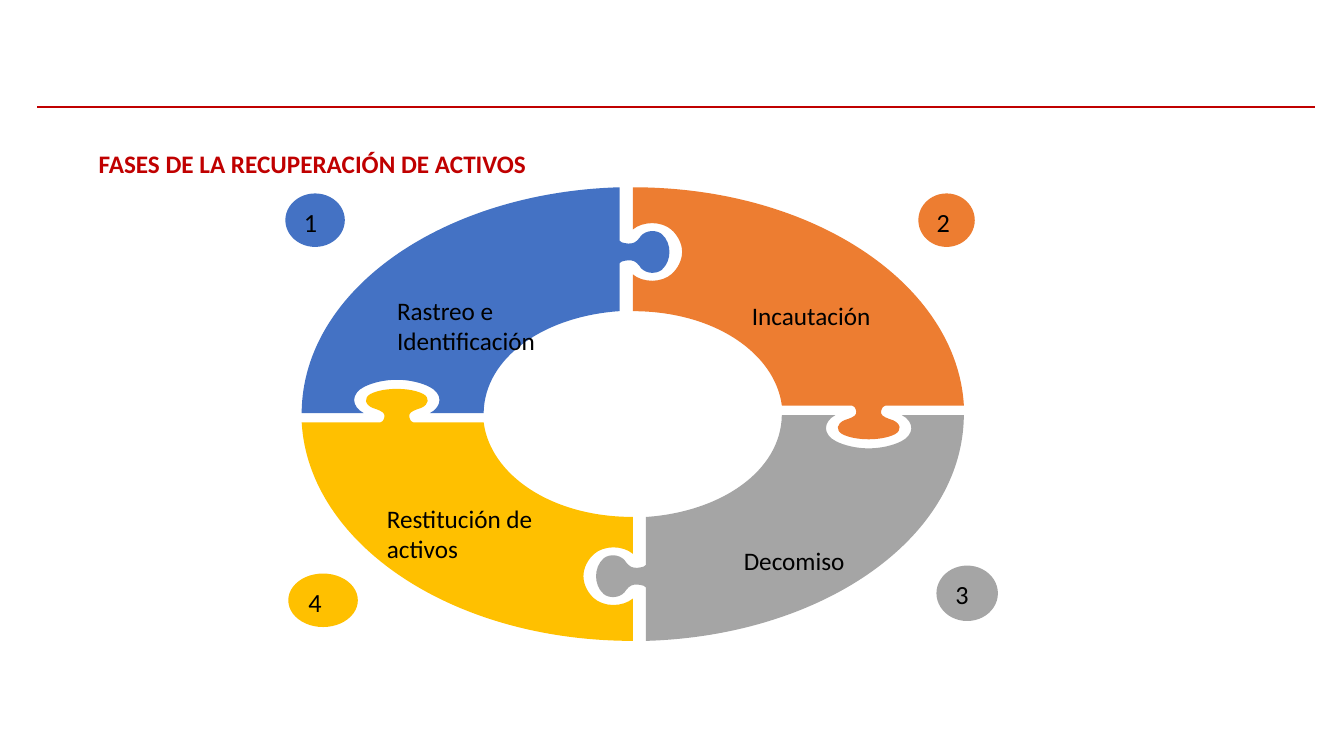
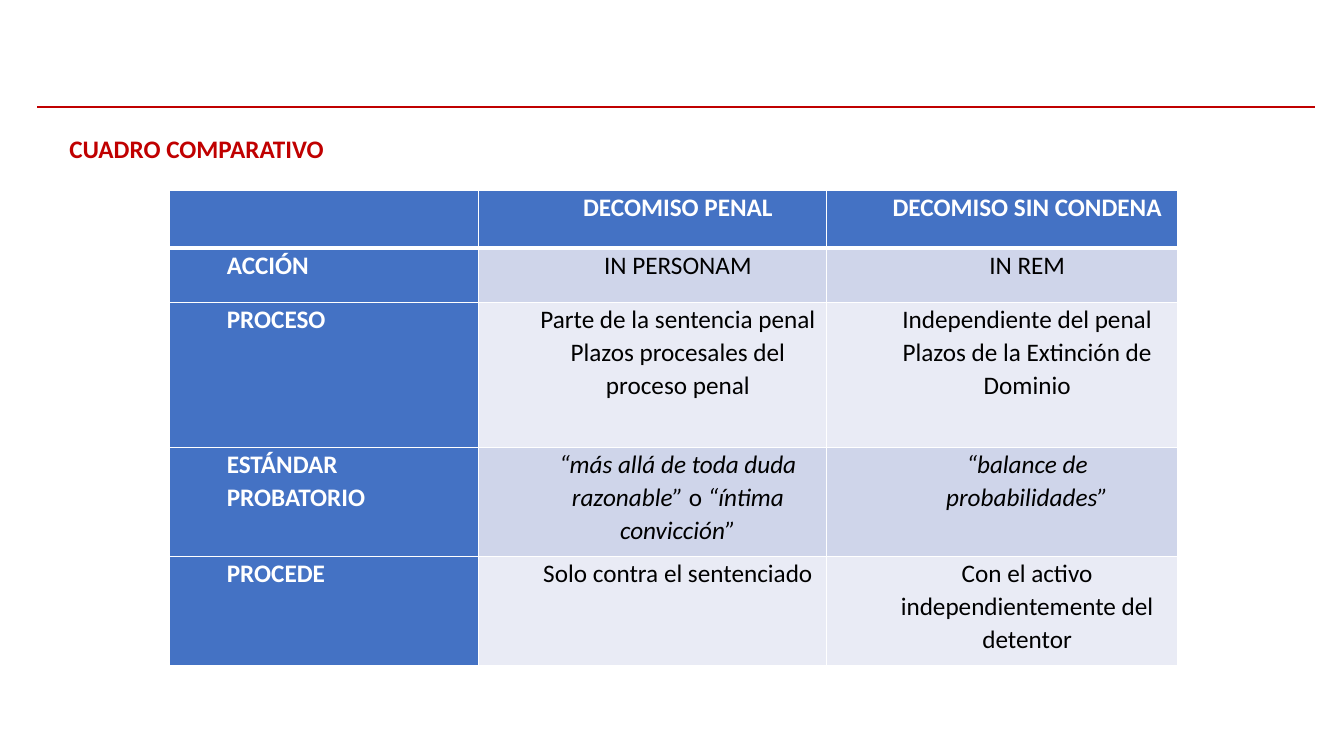
"""Build two slides on the phases of asset recovery and the kinds of confiscation."""

from dataclasses import dataclass
from typing import Any

from lxml.etree import SubElement
from pptx import Presentation
from pptx.dml.color import RGBColor
from pptx.enum.shapes import MSO_CONNECTOR, MSO_SHAPE
from pptx.enum.text import MSO_ANCHOR, MSO_AUTO_SIZE, PP_ALIGN
from pptx.oxml.ns import qn
from pptx.slide import Slide
from pptx.util import Pt

RED = RGBColor(0xC0, 0x00, 0x00)
BLUE = RGBColor(0x44, 0x72, 0xC4)
ORANGE = RGBColor(0xED, 0x7D, 0x31)
GREY = RGBColor(0xA5, 0xA5, 0xA5)
YELLOW = RGBColor(0xFF, 0xC0, 0x00)
BLACK = RGBColor(0x00, 0x00, 0x00)
WHITE = RGBColor(0xFF, 0xFF, 0xFF)
BAND_DARK = RGBColor(0xCF, 0xD5, 0xEA)
BAND_LIGHT = RGBColor(0xE9, 0xEB, 0xF5)

BODY_FONT = {"name": "Calibri", "size": Pt(18), "bold": False, "italic": False}
HEADING_FONT = BODY_FONT | {"bold": True}
QUOTE_FONT = BODY_FONT | {"italic": True}
BADGE_FONT = BODY_FONT | {"size": Pt(18.7)}
LABEL_FORMAT = {"word_wrap": True, "auto_size": MSO_AUTO_SIZE.SHAPE_TO_FIT_TEXT}
CELL_FORMAT = {
    "margin_left": Pt(5), "margin_right": Pt(5), "margin_top": 0, "margin_bottom": 0,
    "vertical_anchor": MSO_ANCHOR.TOP,
}
CELL_INDENT = {"marL": str(Pt(36)), "indent": "0"}

Point = tuple[float, float]
Place = tuple[float, float, float, float]
Span = tuple[str, dict[str, Any]]

HUB_X, HUB_Y = 452, 295.8
OUTER_RADII = (236.5, 162)
INNER_RADII = (106.5, 73.5)
JOINT_X, JOINT_Y = 168.5, 115.8
STRETCH = 1.48
ARC_FACTOR = 0.55
UNITS_PER_POINT = 100
HALF_KNOB: list[Point] = [
    (8, 0), (7.2, 0.3), (6.3, 1.5), (6.3, 2.5), (5.7, 4.5), (5.7, 6.8), (8, 8.3),
    (9.3, 9.4), (10.7, 9.8), (11.6, 10.3), (15.7, 13), (15.9, 17.6), (12.8, 20.3),
    (9.3, 23), (4.3, 24), (0, 24),
]
HALF_SOCKET: list[Point] = [
    (16, 0), (18.9, 2.2), (20.6, 5.8), (20.6, 9.4),
    (20.6, 13), (18.7, 16.6), (15.8, 18.7), (12, 21.6), (6.1, 23.8), (0, 23.8),
]


@dataclass(frozen=True)
class Phase:
    number: str
    label: str
    color: RGBColor
    side_x: int
    side_y: int
    label_place: Place
    badge_place: Place


PHASES = [
    Phase("1", "Rastreo e Identificación", BLUE, -1, -1,
          (276.5, 207.4, 140.4, 51), (203.8, 138.2, 42.5, 38.2)),
    Phase("2", "Incautación", ORANGE, 1, -1,
          (530, 211, 174.2, 29), (656, 138.2, 40.3, 38.2)),
    Phase("3", "Decomiso", GREY, 1, 1,
          (524.2, 385.9, 155.5, 29), (668.9, 404, 43.9, 39.6)),
    Phase("4", "Restitución de activos", YELLOW, -1, 1,
          (269.3, 355.7, 118.8, 51), (205.9, 409.7, 49.7, 38.2)),
]

COLUMN_WIDTHS = [221, 248.4, 250.6]
ROW_HEIGHTS = [41, 38.9, 103.7, 77.8, 77.8]
HEADERS = ["", "DECOMISO PENAL", "DECOMISO SIN CONDENA"]
COMPARISON: list[tuple[str, list[list[Span]], list[list[Span]]]] = [
    ("ACCIÓN", [[("IN PERSONAM", BODY_FONT)]], [[("IN REM", BODY_FONT)]]),
    ("PROCESO",
     [[("Parte de la sentencia penal", BODY_FONT)],
      [("Plazos procesales del proceso penal", BODY_FONT)]],
     [[("Independiente del penal Plazos de la Extinción de Dominio", BODY_FONT)]]),
    ("ESTÁNDAR PROBATORIO",
     [[("“más allá de toda duda razonable”", QUOTE_FONT), (" o ", BODY_FONT),
       ("“íntima convicción”", QUOTE_FONT)]],
     [[("“balance de", QUOTE_FONT)], [("probabilidades”", QUOTE_FONT)]]),
    ("PROCEDE", [[("Solo contra el sentenciado", BODY_FONT)]],
     [[("Con el activo independientemente del detentor", BODY_FONT)]]),
]


def apply(target: Any, values: dict[str, Any]) -> None:
    for name, value in values.items():
        setattr(target, name, value)


def add_span(para: Any, text: str, font: dict[str, Any], color: RGBColor) -> None:
    span = para.add_run()
    span.text = text
    apply(span.font, font)
    span.font.color.rgb = color


def add_label(page: Slide, place: Place, text: str, font: dict[str, Any] = BODY_FONT,
              color: RGBColor = BLACK) -> None:
    box = page.shapes.add_textbox(*map(Pt, place))
    apply(box.text_frame, LABEL_FORMAT)
    add_span(box.text_frame.paragraphs[0], text, font, color)


def add_page(deck: Any, title: str, left: float, top: float) -> Slide:
    page = deck.slides.add_slide(deck.slide_layouts[6])
    rule = page.shapes.add_connector(MSO_CONNECTOR.STRAIGHT, Pt(26.6), Pt(76.3), Pt(939), Pt(76.3))
    rule.line.color.rgb = RED
    rule.line.width = Pt(1.5)
    SubElement(rule._element.spPr, qn("a:effectLst"))
    add_label(page, (left, top, 480, 29), title, HEADING_FONT, RED)
    return page


def paint(shape: Any, color: RGBColor) -> None:
    shape.shadow.inherit = False
    shape.fill.solid()
    shape.fill.fore_color.rgb = color
    shape.line.fill.background()


def quarter_arc(radii: Point, gap_x: float, gap_y: float) -> list[Point]:
    radius_x, radius_y = radii
    lean_x = ARC_FACTOR * radius_x * gap_y / radius_y
    lean_y = ARC_FACTOR * radius_y * gap_x / radius_x
    return [
        (gap_x, radius_y),
        (gap_x + ARC_FACTOR * (radius_x - gap_x), radius_y - lean_y),
        (radius_x - lean_x, gap_y + ARC_FACTOR * (radius_y - gap_y)),
        (radius_x, gap_y),
    ]


def mirrored(half: list[Point]) -> list[Point]:
    return half + [(-along, depth) for along, depth in reversed(half[:-1])]


def piece_outline(phase: Phase) -> list[Point]:
    if phase.side_x == phase.side_y:
        gap_x, gap_y, inward = 9.3, 0.7, 1
        flat_joint, upright_joint = HALF_SOCKET, HALF_KNOB
    else:
        gap_x, gap_y, inward = 0, 6, -1
        flat_joint, upright_joint = HALF_KNOB, HALF_SOCKET
    curves = [
        quarter_arc(OUTER_RADII, gap_x, gap_y),
        [(JOINT_X + along * STRETCH, gap_y + inward * depth)
         for along, depth in mirrored(flat_joint)],
        quarter_arc(INNER_RADII, gap_x, gap_y)[::-1],
        [(gap_x - inward * depth * STRETCH, JOINT_Y - along)
         for along, depth in mirrored(upright_joint)],
    ]
    outline = list(curves[0])
    for curve in curves[1:]:
        outline += [outline[-1], curve[0], *curve]
    return [(HUB_X + phase.side_x * x, HUB_Y + phase.side_y * y) for x, y in outline]


def add_piece(page: Slide, phase: Phase) -> None:
    start, *points = [(x * UNITS_PER_POINT, y * UNITS_PER_POINT) for x, y in piece_outline(phase)]
    builder = page.shapes.build_freeform(*start, scale=Pt(1) / UNITS_PER_POINT)
    builder.add_line_segments(points, close=True)
    piece = builder.convert_to_shape()
    segments = list(piece._element.iter(qn("a:lnTo")))
    for first in range(0, len(points), 3):
        curve = segments[first].makeelement(qn("a:cubicBezTo"))
        segments[first].addprevious(curve)
        for segment in segments[first:first + 3]:
            curve.append(segment[0])
            segment.getparent().remove(segment)
    paint(piece, phase.color)


def add_badge(page: Slide, phase: Phase) -> None:
    badge = page.shapes.add_shape(MSO_SHAPE.OVAL, *map(Pt, phase.badge_place))
    paint(badge, phase.color)
    badge.text_frame.vertical_anchor = MSO_ANCHOR.TOP
    para = badge.text_frame.paragraphs[0]
    para.alignment = PP_ALIGN.LEFT
    add_span(para, phase.number, BADGE_FONT, BLACK)


def fill_cell(cell: Any, paragraphs: list[list[Span]], fill: RGBColor, color: RGBColor,
              alignment: PP_ALIGN, bottom: float = 1) -> None:
    apply(cell, CELL_FORMAT)
    properties = cell._tc.get_or_add_tcPr()
    for side, width in {"L": 1, "R": 1, "T": 1, "B": bottom}.items():
        border = SubElement(properties, qn(f"a:ln{side}"), w=str(Pt(width)))
        SubElement(SubElement(border, qn("a:solidFill")), qn("a:srgbClr"), val=str(WHITE))
    cell.fill.solid()
    cell.fill.fore_color.rgb = fill
    frame = cell.text_frame
    for index, spans in enumerate(paragraphs):
        para = frame.add_paragraph() if index else frame.paragraphs[0]
        apply(para, {"alignment": alignment, "line_spacing": 1.07})
        para._p.get_or_add_pPr().attrib.update(CELL_INDENT)
        for text, font in spans:
            add_span(para, text, font, color)


def add_comparison(page: Slide) -> None:
    frame = page.shapes.add_table(len(ROW_HEIGHTS), len(COLUMN_WIDTHS), Pt(121), Pt(136.1),
                                  Pt(sum(COLUMN_WIDTHS)), Pt(sum(ROW_HEIGHTS)))
    table = frame.table
    apply(table, {"first_row": False, "horz_banding": False})
    for column, width in zip(table.columns, COLUMN_WIDTHS):
        column.width = Pt(width)
    for row, height in zip(table.rows, ROW_HEIGHTS):
        row.height = Pt(height)
    for column, header in enumerate(HEADERS):
        paragraphs = [[(header, HEADING_FONT)]] if header else []
        fill_cell(table.cell(0, column), paragraphs, BLUE, WHITE, PP_ALIGN.CENTER, bottom=3)
    for row, (heading, *answers) in enumerate(COMPARISON, start=1):
        fill_cell(table.cell(row, 0), [[(heading, HEADING_FONT)]], BLUE, WHITE, PP_ALIGN.LEFT)
        band = BAND_DARK if row % 2 else BAND_LIGHT
        for column, answer in enumerate(answers, start=1):
            fill_cell(table.cell(row, column), answer, band, BLACK, PP_ALIGN.CENTER)


def main() -> None:
    deck = Presentation()
    apply(deck, {"slide_width": Pt(960), "slide_height": Pt(540)})
    phases_page = add_page(deck, "FASES DE LA RECUPERACIÓN DE ACTIVOS", 63.4, 102.2)
    for phase in PHASES:
        add_piece(phases_page, phase)
    for phase in PHASES:
        add_label(phases_page, phase.label_place, phase.label)
        add_badge(phases_page, phase)
    add_comparison(add_page(deck, "CUADRO COMPARATIVO", 42.5, 91.4))
    deck.save("out.pptx")


if __name__ == "__main__":
    main()
